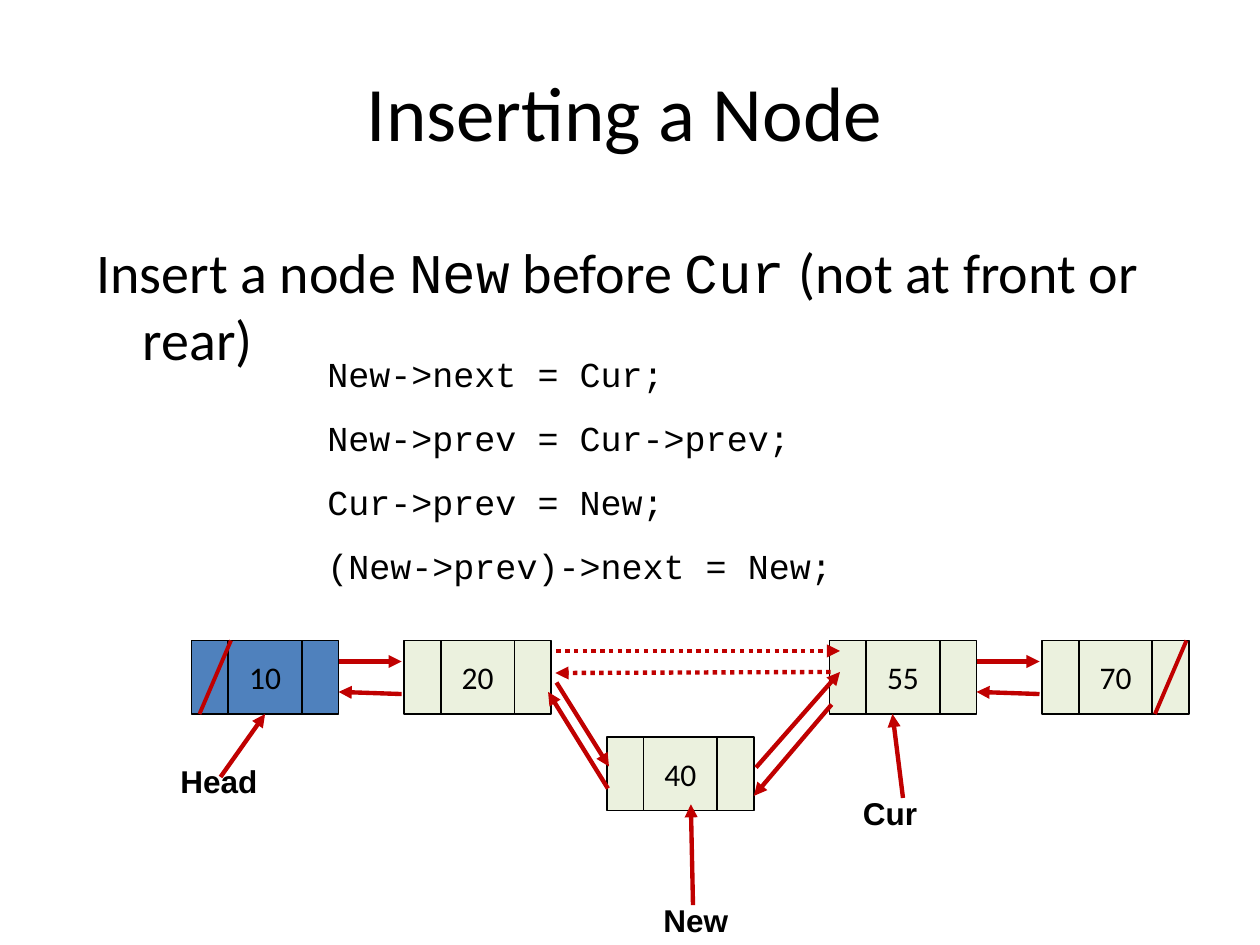
from lxml.etree import SubElement
from pptx import Presentation
from pptx.dml.color import RGBColor
from pptx.enum.dml import MSO_LINE
from pptx.enum.shapes import MSO_CONNECTOR, MSO_SHAPE
from pptx.enum.text import MSO_ANCHOR, PP_ALIGN
from pptx.oxml.ns import qn
from pptx.util import Inches, Pt

COLS, ROWS = 120, 90
SLIDE_W, SLIDE_H = Inches(10), Inches(7.5)
BLACK, RED, BLUE, GREEN = "000000", "C00000", "4F81BD", "EBF1DE"
NODE_W, NODE_H, CELL = 14, 7, 3.5
LIST_X, LIST_Y, PITCH = 18.25, 61, 20.25
NEW_X, NEW_Y = 57.8, 70.2


def rgb(value):
    """Turn a hex string into a colour."""
    return RGBColor.from_string(value)


def grid(x, y):
    """Turn a column and a row into slide lengths."""
    return round(SLIDE_W * x / COLS), round(SLIDE_H * y / ROWS)


def style(font, size, name, bold=False):
    """Set size, typeface and weight of black text."""
    font.size, font.name, font.bold = Pt(size), name, bold
    font.color.rgb = rgb(BLACK)


def hang(p, indent):
    """Give a paragraph a hanging indent in inches."""
    pPr = p._p.get_or_add_pPr()
    pPr.set("marL", str(Inches(indent)))
    pPr.set("indent", str(-Inches(indent)))


def add_title(s, box, text):
    """Place and format the title placeholder."""
    sp = s.shapes.title
    sp.left, sp.top = grid(*box[:2])
    sp.width, sp.height = grid(*box[2:])
    tf = sp.text_frame
    tf.text, tf.vertical_anchor = text, MSO_ANCHOR.MIDDLE
    p = tf.paragraphs[0]
    p.alignment = PP_ALIGN.CENTER
    style(p.font, 44, "Calibri")


def add_text(s, box, lines, size, name, bold=False, wrap=True, gap=0):
    """Add a text box with one hanging paragraph per line."""
    tf = s.shapes.add_textbox(*grid(*box[:2]), *grid(*box[2:])).text_frame
    tf.word_wrap = wrap
    for i, line in enumerate(lines):
        p = tf.paragraphs[0] if i == 0 else tf.add_paragraph()
        hang(p, 0.37)
        if i:
            p.space_before = Pt(gap)
        p.text = line
        style(p.font, size, name, bold)


def add_statement(s, box, parts):
    """Add a sentence that alternates prose and code words."""
    tf = s.shapes.add_textbox(*grid(*box[:2]), *grid(*box[2:])).text_frame
    tf.word_wrap = True
    p = tf.paragraphs[0]
    hang(p, 0.37)
    for i, part in enumerate(parts):
        r = p.add_run()
        r.text = part
        style(r.font, 32, "Courier New" if i % 2 else "Calibri")


def add_node(s, x, y, value, fill):
    """Add a grouped three-cell list node and return its value cell."""
    group = s.shapes.add_group_shape()
    cells = []
    for offset, width in ((0, CELL), (CELL, 2 * CELL), (3 * CELL, CELL)):
        sp = group.shapes.add_shape(
            MSO_SHAPE.RECTANGLE, *grid(x + offset, y), *grid(width, NODE_H))
        sp.shadow.inherit = False
        sp.fill.solid()
        sp.fill.fore_color.rgb = rgb(fill)
        sp.line.color.rgb = rgb(BLACK)
        sp.line.width = Pt(1)
        cells.append(sp)
    tf = cells[1].text_frame
    tf.text, tf.word_wrap, tf.vertical_anchor = value, False, MSO_ANCHOR.MIDDLE
    p = tf.paragraphs[0]
    p.alignment = PP_ALIGN.CENTER
    style(p.font, 18, "Calibri")
    return cells[1]


def add_line(s, start, end, width=2.5, arrow=True, dotted=False):
    """Add a red line, by default with an arrowhead at its end."""
    c = s.shapes.add_connector(MSO_CONNECTOR.STRAIGHT, *grid(*start), *grid(*end))
    c.line.color.rgb = rgb(RED)
    c.line.width = Pt(width)
    if dotted:
        c.line.dash_style = MSO_LINE.ROUND_DOT
    if arrow:
        SubElement(c.line._get_or_add_ln(), qn("a:tailEnd"), type="triangle")
    SubElement(c._element.spPr, qn("a:effectLst"))
    return c


def add_links(s, x, y):
    """Add the next and prev arrows in the gap after a node."""
    add_line(s, (x, y + 2), (x + 6, y + 2))
    add_line(s, (x + 6, y + 5.1), (x, y + 4.9))


def add_null(s, x, y):
    """Strike out an empty pointer cell."""
    add_line(s, (x + 3, y), (x, y + NODE_H), width=2.25, arrow=False)


def add_insertion(s, x, y):
    """Add the old dotted links and the new links around the inserted node."""
    add_line(s, (x + 0.5, y + 1), (x + 27.5, y + 1), dotted=True)
    add_line(s, (x + 26.6, y + 3), (x + 0.4, y + 3.1), dotted=True)
    add_line(s, (x + 0.5, y + 4), (x + 5.5, y + 12))
    add_line(s, (x + 5.4, y + 14.1), (x - 0.3, y + 4.9))
    add_line(s, (x + 19.5, y + 12.1), (x + 27.5, y + 3))
    add_line(s, (x + 26.7, y + 6.1), (x + 19.3, y + 14.8))


def add_diagram(s, x, y):
    """Draw the linked list with the node being inserted."""
    slots = [x + k * PITCH for k in (0, 1, 3, 4)]
    fills = (BLUE, GREEN, GREEN, GREEN)
    cells = [add_node(s, left, y, value, fill)
             for left, value, fill in zip(slots, ("10", "20", "55", "70"), fills)]
    add_node(s, NEW_X, NEW_Y, "40", GREEN)
    for left in (slots[0], slots[2]):
        add_links(s, left + NODE_W, y)
    add_insertion(s, slots[1] + NODE_W, y)
    add_null(s, slots[0] + 0.75, y)
    add_null(s, slots[3] + 3 * CELL + 0.25, y)
    for text, box in (("Head", (16, 72, 9.8, 4.9)), ("Cur", (81, 75, 7.6, 4.9)),
                      ("New", (62, 85.2, 12, 4.9))):
        add_text(s, box, [text], 18, "Arial", bold=True, wrap=text == "New")
    add_line(s, (21, 74), (25, 68)).end_connect(cells[0], 2)
    add_line(s, (86, 76), (85, 68))
    add_line(s, (66, 86.2), (65.8, 76.6))


def main():
    """Build and save the slide."""
    prs = Presentation()
    prs.slide_width, prs.slide_height = SLIDE_W, SLIDE_H
    s = prs.slides.add_slide(prs.slide_layouts[5])
    add_title(s, (8, 3, 103, 15), "Inserting a Node")
    add_statement(s, (8, 22, 103, 54),
                  ("Insert a node ", "New", " before ", "Cur", " (not at front or rear)"))
    add_text(s, (30, 33, 60, 24),
             ("New->next = Cur;", "New->prev = Cur->prev;", "Cur->prev = New;",
              "(New->prev)->next = New;"), 20, "Courier New", gap=12.5)
    add_diagram(s, LIST_X, LIST_Y)
    prs.save("out.pptx")


if __name__ == "__main__":
    main()
